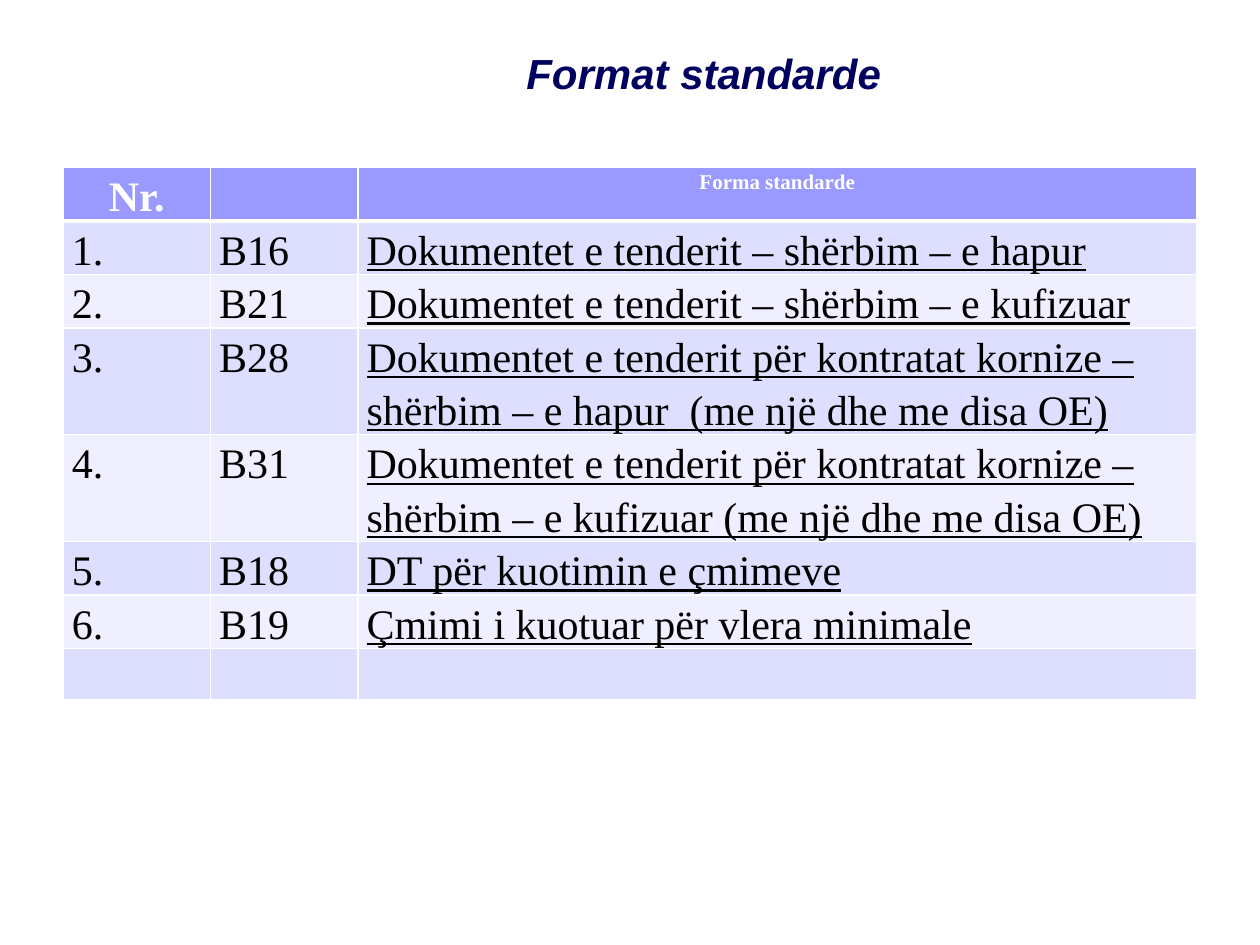
from typing import NamedTuple

from lxml.etree import SubElement
from pptx import Presentation
from pptx.dml.color import RGBColor
from pptx.enum.text import MSO_ANCHOR, PP_ALIGN
from pptx.oxml.ns import qn
from pptx.util import Inches, Pt

COLORS = {
    "title": "00005E",
    "header": "9999FF",
    "odd": "DEDEFF",
    "even": "EFEFFF",
    "rule": "FFFFFF",
    "header_text": "FFFFFF",
    "body_text": "000000",
}
SLIDE_W, SLIDE_H = 10, 7.5
TABLE_W, ROW_H = 0.9 * SLIDE_W, 0.41
COLUMN_SHARES = (0.13, 0.13, 0.74)
RULE, HEADER_RULE = 1, 3


class Form(NamedTuple):
    number: str
    code: str
    name: str


FORMS = (
    Form("1.", "B16", "Dokumentet e tenderit – shërbim – e hapur"),
    Form("2.", "B21", "Dokumentet e tenderit – shërbim – e kufizuar"),
    Form("3.", "B28", "Dokumentet e tenderit për kontratat kornize – "
                      "shërbim – e hapur  (me një dhe me disa OE)"),
    Form("4.", "B31", "Dokumentet e tenderit për kontratat kornize – "
                      "shërbim – e kufizuar (me një dhe me disa OE)"),
    Form("5.", "B18", "DT për kuotimin e çmimeve"),
    Form("6.", "B19", "Çmimi i kuotuar për vlera minimale"),
    Form("", "", ""),
)
HEADER = Form("Nr.", "", "Forma standarde")


def color(name: str) -> RGBColor:
    return RGBColor.from_string(COLORS[name])


def draw_borders(cell, top: float, bottom: float) -> None:
    properties = cell._tc.get_or_add_tcPr()
    for side, width in (("L", RULE), ("R", RULE), ("T", top), ("B", bottom)):
        line = SubElement(properties, qn(f"a:ln{side}"), w=str(Pt(width)))
        fill = SubElement(line, qn("a:solidFill"))
        SubElement(fill, qn("a:srgbClr"), val=COLORS["rule"])


def fill_cell(cell, row: int, column: int, text: str) -> None:
    is_header = row == 0
    draw_borders(cell,
                 top=HEADER_RULE if row == 1 else RULE,
                 bottom=HEADER_RULE if is_header else RULE)
    cell.fill.solid()
    cell.fill.fore_color.rgb = color(
        "header" if is_header else "odd" if row % 2 else "even")
    if not text:
        return
    cell.margin_left = cell.margin_right = Inches(0.07)
    cell.margin_top = cell.margin_bottom = 0
    cell.text_frame.text = text
    paragraph = cell.text_frame.paragraphs[0]
    paragraph.line_spacing = 1.15
    paragraph.alignment = PP_ALIGN.CENTER if is_header else PP_ALIGN.LEFT
    font = paragraph.runs[0].font
    font.name = "Times New Roman"
    font.size = Pt(12 if is_header and column == 2 else 24)
    font.bold = is_header
    font.underline = not is_header and column == 2
    font.color.rgb = color("header_text" if is_header else "body_text")


def add_title(slide, text: str) -> None:
    title = slide.shapes.title
    title.left, title.top = Inches(1.17), Inches(0.33)
    title.width, title.height = Inches(8.83), Inches(1.01)
    frame = title.text_frame
    frame.text = text
    frame.word_wrap = True
    frame.vertical_anchor = MSO_ANCHOR.TOP
    paragraph = frame.paragraphs[0]
    paragraph.alignment = PP_ALIGN.CENTER
    font = paragraph.runs[0].font
    font.name, font.size = "Arial", Pt(24)
    font.bold = font.italic = True
    font.color.rgb = color("title")


def add_forms_table(slide, rows: tuple[Form, ...]) -> None:
    table = slide.shapes.add_table(
        len(rows), len(COLUMN_SHARES),
        Inches((SLIDE_W - TABLE_W) / 2), Inches(1.33),
        Inches(TABLE_W), Inches(ROW_H * len(rows))).table
    table.horz_banding = False
    for column, share in zip(table.columns, COLUMN_SHARES):
        column.width = Inches(TABLE_W * share)
    for row, form in enumerate(rows):
        table.rows[row].height = Inches(ROW_H)
        for column, text in enumerate(form):
            fill_cell(table.cell(row, column), row, column, text)


def main() -> None:
    presentation = Presentation()
    presentation.slide_width = Inches(SLIDE_W)
    presentation.slide_height = Inches(SLIDE_H)
    slide = presentation.slides.add_slide(presentation.slide_layouts[5])
    # Heading, then the list of standard forms
    add_title(slide, "Format standarde")
    add_forms_table(slide, (HEADER, *FORMS))
    presentation.save("out.pptx")


if __name__ == "__main__":
    main()
